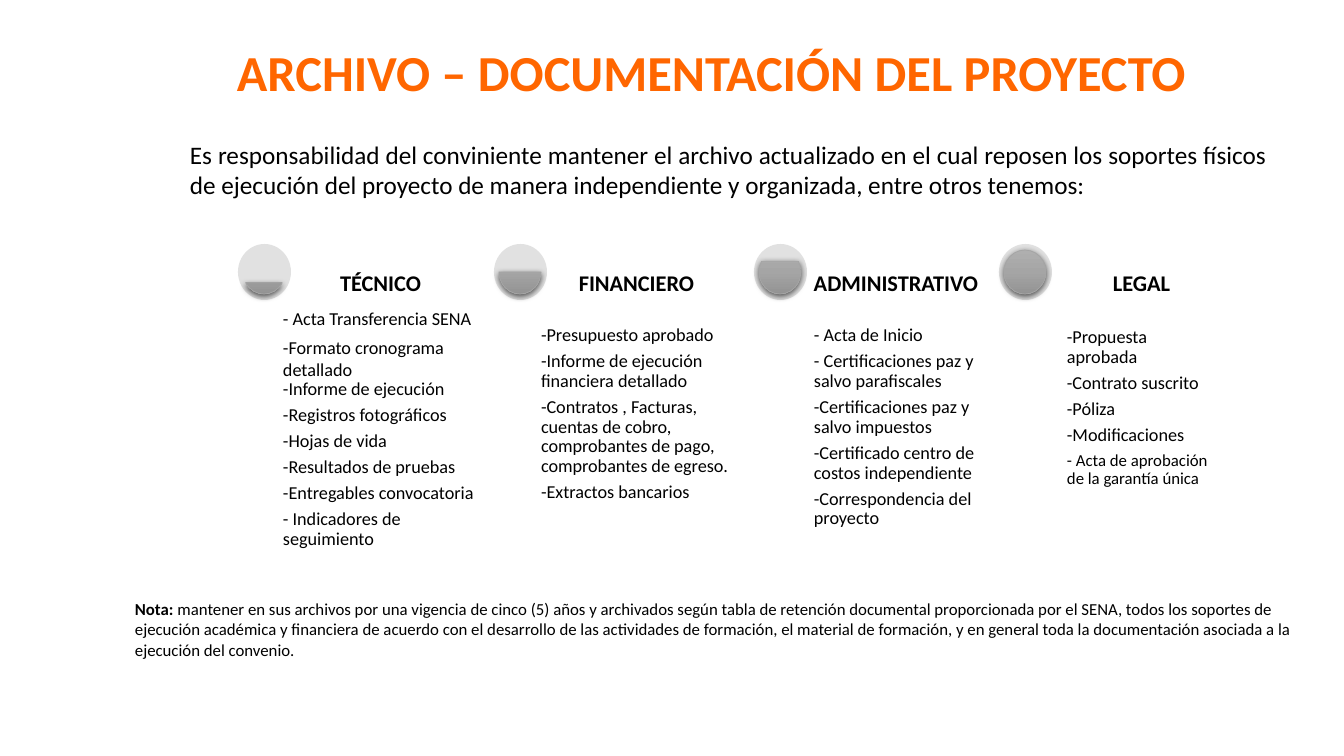
from copy import deepcopy

from lxml import etree
from pptx import Presentation
from pptx.dml.color import RGBColor
from pptx.enum.shapes import MSO_SHAPE as SHAPE
from pptx.enum.text import MSO_ANCHOR as ANCHOR, PP_ALIGN as ALIGN
from pptx.oxml.ns import qn
from pptx.util import Emu, Pt

SCALE = 914400 / 100.8
BLACK, ORANGE, PALE, GREY = "000000", "FF6600", "E1E1E1", "A5A5A5"
GAUGE_STOPS = [(0, "AFAFAF"), (0.5, GREY), (1, "939393")]


def px(*lengths):
    return [Emu(round(length * SCALE)) for length in lengths]


def write(shape, lines, size, color=BLACK, bold=False, align=ALIGN.LEFT,
          anchor=ANCHOR.TOP, inset=None, spacing=None, after=0):
    frame = shape.text_frame
    frame.word_wrap = True
    frame.vertical_anchor = anchor
    if inset is not None:
        frame.margin_left = frame.margin_top = px(inset)[0]
        frame.margin_right = frame.margin_bottom = px(inset)[0]
    frame.text = "\n".join(lines)
    for paragraph in frame.paragraphs:
        paragraph.alignment = align
        paragraph.line_spacing = spacing
        paragraph.space_after = Pt(after)
        for run in paragraph.runs:
            run.font.name, run.font.size, run.font.bold = "Calibri", Pt(size), bold
            run.font.color.rgb = RGBColor.from_string(color)
    return frame.paragraphs


prs = Presentation()
prs.slide_width, prs.slide_height = px(1344, 756)
slide = prs.slides.add_slide(prs.slide_layouts[5])
shapes = slide.shapes

# Title and introduction
title = shapes.title
title.left, title.top, title.width, title.height = px(214, 41, 995, 61)
write(title, ["ARCHIVO – DOCUMENTACIÓN DEL PROYECTO"], 36, ORANGE, True,
      ALIGN.CENTER, ANCHOR.MIDDLE, inset=0)
intro = shapes.add_textbox(*px(180, 134, 1097, 72))
write(intro, ["Es responsabilidad del conviniente mantener el archivo actualizado en el "
              "cual reposen los soportes físicos de ejecución del proyecto de manera "
              "independiente y organizada, entre otros tenemos:"], 18, align=ALIGN.JUSTIFY)

# Sections: heading, heading box (left, width), gauge left, chord angles, list box, items
sections = [
    ("TÉCNICO", (302, 157), 238, (18, 90), (279, 306, 206, 265), [
        "- Acta Transferencia SENA", "-Formato cronograma detallado",
        "-Informe de ejecución", "-Registros fotográficos", "-Hojas de vida",
        "-Resultados de pruebas", "-Entregables convocatoria",
        "- Indicadores de seguimiento"]),
    ("FINANCIERO", (558, 157), 494, (0, 108), (537, 322, 213, 236), [
        "-Presupuesto aprobado", "-Informe de ejecución financiera detallado",
        "-Contratos , Facturas, cuentas de cobro, comprobantes de pago, "
        "comprobantes de egreso.", "-Extractos bancarios"]),
    ("ADMINISTRATIVO", (805, 182), 754, (198, 126), (810, 322, 172, 236), [
        "- Acta de Inicio", "- Certificaciones paz y salvo parafiscales",
        "-Certificaciones paz y salvo impuestos",
        "-Certificado centro de costos independiente",
        "-Correspondencia del proyecto"]),
    ("LEGAL", (1063, 157), 999, (162, 162), (1063, 324, 157, 236), [
        "-Propuesta aprobada", "-Contrato suscrito", "-Póliza", "-Modificaciones",
        "- Acta de aprobación de la garantía única"]),
]
item_lists = []
for heading, (left, width), gauge_left, angles, list_box, items in sections:
    # Gauge: pale disc with a grey level
    disc = shapes.add_shape(SHAPE.OVAL, *px(gauge_left, 244, 53, 56))
    disc.shadow.inherit = False
    disc.fill.solid()
    disc.fill.fore_color.rgb = RGBColor.from_string(PALE)
    disc.line.fill.background()

    level = shapes.add_shape(SHAPE.CHORD, *px(gauge_left + 5, 250, 42, 44))
    level.adjustments[0], level.adjustments[1] = angles
    level.line.color.rgb = RGBColor.from_string(GREY)
    level.line.width = Pt(0.5)
    level.fill.gradient()
    level.fill.gradient_angle = 270
    properties = level._element.spPr
    stop_list = properties.find(".//" + qn("a:gsLst"))
    stop_list.insert(1, deepcopy(stop_list[0]))
    for stop, (position, color) in zip(level.fill.gradient_stops, GAUGE_STOPS):
        stop.position = position
        stop.color.rgb = RGBColor.from_string(color)
    level.shadow.inherit = False
    shadow = etree.SubElement(properties.find(qn("a:effectLst")), qn("a:outerShdw"),
                              blurRad="57150", dist="19050", dir="5400000",
                              algn="ctr", rotWithShape="0")
    shadow_color = etree.SubElement(shadow, qn("a:srgbClr"), val=BLACK)
    etree.SubElement(shadow_color, qn("a:alpha"), val="63000")

    # Document list and heading, each in an unfilled outline
    panels = []
    for x, y, w, h in (list_box, (left, 244, width, 56)):
        outline = shapes.build_freeform(0, 0, SCALE)
        outline.add_line_segments([(w, 0), (w, h), (0, h)], close=True)
        panel = outline.convert_to_shape(*px(x, y))
        panel.fill.background()
        panel.line.fill.background()
        panel.shadow.inherit = False
        panels.append(panel)
    documents, label = panels
    item_lists.append(write(documents, items, 13, inset=4, spacing=0.9, after=4.55))
    write(label, [heading], 16, bold=True, align=ALIGN.CENTER, anchor=ANCHOR.BOTTOM,
          inset=4, spacing=0.9)

# Two items set apart from the list style
schedule, guarantee = item_lists[0][1], item_lists[3][-1]
schedule.line_spacing, schedule.space_after = 1.0, Pt(0)
guarantee.runs[0].font.size = Pt(12)

# Closing note
note = shapes.add_textbox(*px(125, 594, 1181, 72))
paragraph = write(note, ["Nota: "], 12, bold=True)[0]
body = paragraph.add_run()
body.text = ("mantener en sus archivos por una vigencia de cinco (5) años y archivados según "
             "tabla de retención documental proporcionada por el SENA, todos los soportes de "
             "ejecución académica y financiera de acuerdo con el desarrollo de las actividades "
             "de formación, el material de formación, y en general toda la documentación "
             "asociada a la ejecución del convenio.")
body.font.name, body.font.size, body.font.bold = "Calibri", Pt(12), False
body.font.color.rgb = RGBColor.from_string(BLACK)

prs.save("out.pptx")
